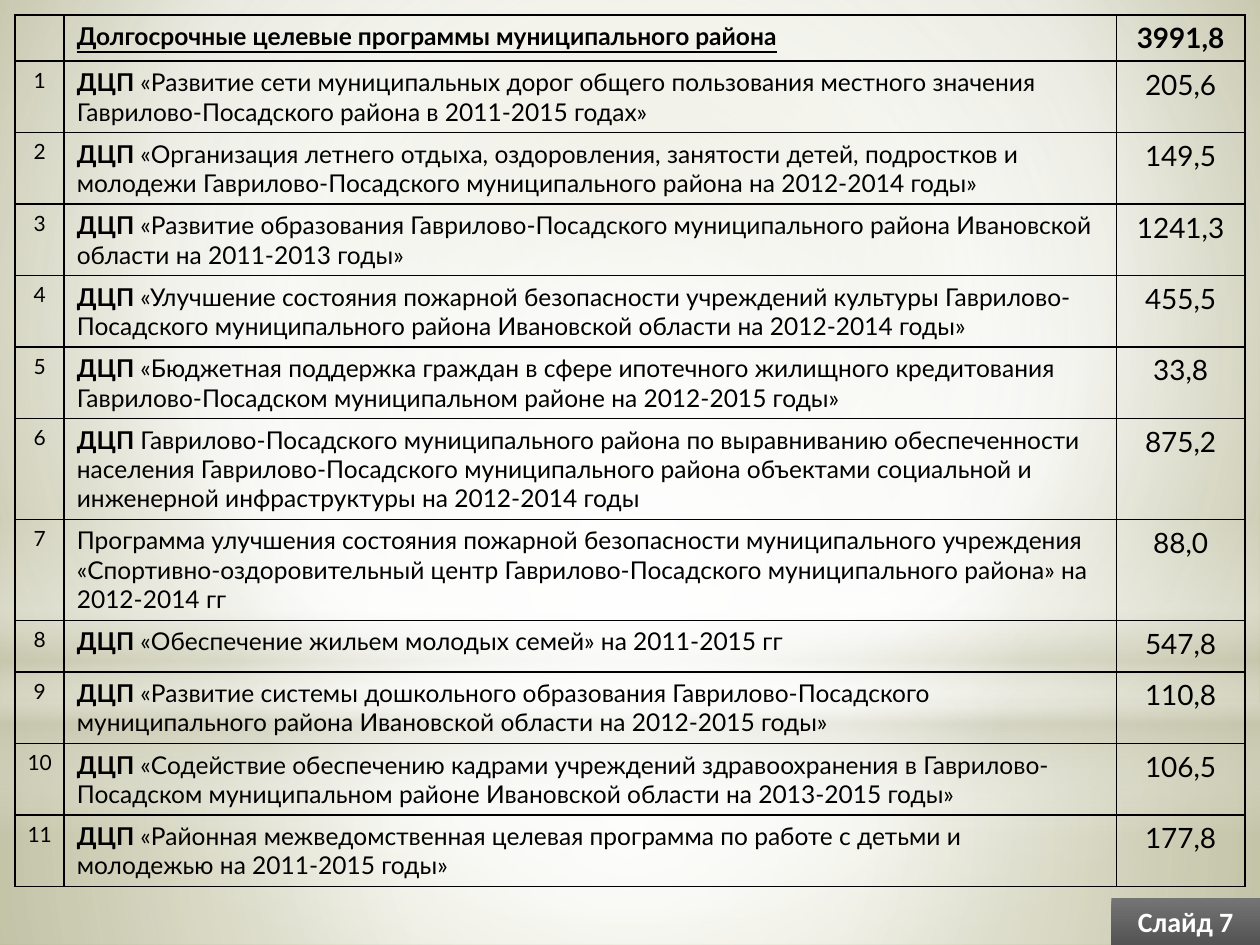
import pptx
import pptx.dml.color
import pptx.enum.shapes
import pptx.enum.text
import pptx.oxml
import pptx.oxml.ns
import pptx.util
from pptx.util import Inches

RGBColor = pptx.dml.color.RGBColor
SHAPE = pptx.enum.shapes.MSO_SHAPE
CENTER = pptx.enum.text.PP_ALIGN.CENTER
qn = pptx.oxml.ns.qn
NS = pptx.oxml.ns.nsdecls("a")

BLACK = RGBColor(0x00, 0x00, 0x00)
WHITE = RGBColor(0xFF, 0xFF, 0xFF)
SAND = RGBColor(0xC8, 0xC8, 0xB1)
OLIVE_LIGHT = RGBColor(0xC7, 0xC7, 0xA5)
OLIVE = RGBColor(0xB1, 0xB1, 0x80)
IVORY = RGBColor(0xFB, 0xFB, 0xF9)
GRAY = RGBColor(0x74, 0x74, 0x74)
GRAY_DARK = RGBColor(0x53, 0x53, 0x53)

MIDDLE = (50, 50, 50, 50)
COLUMNS = (0.39, 8.35, 1.02)
ROW_HEIGHTS = {1: 0.36, 2: 0.56, 3: 0.8}
MARK = "ДЦП "
TITLE = ("Долгосрочные целевые программы муниципального района", "3991,8")

# name, amount, number of text lines
PROGRAMMES = [
    ("ДЦП «Развитие сети муниципальных дорог общего пользования местного значения "
     "Гаврилово-Посадского района в 2011-2015 годах»", "205,6", 2),
    ("ДЦП «Организация летнего отдыха, оздоровления, занятости детей, подростков и молодежи "
     "Гаврилово-Посадского муниципального района на 2012-2014 годы»", "149,5", 2),
    ("ДЦП «Развитие образования Гаврилово-Посадского муниципального района "
     "Ивановской области на 2011-2013 годы»", "1241,3", 2),
    ("ДЦП «Улучшение состояния пожарной безопасности учреждений культуры Гаврилово-Посадского "
     "муниципального района Ивановской области на 2012-2014 годы»", "455,5", 2),
    ("ДЦП «Бюджетная поддержка граждан в сфере ипотечного жилищного кредитования "
     "Гаврилово-Посадском муниципальном районе на 2012-2015 годы»", "33,8", 2),
    ("ДЦП Гаврилово-Посадского муниципального района по выравниванию обеспеченности населения "
     "Гаврилово-Посадского муниципального района объектами социальной и инженерной "
     "инфраструктуры на 2012-2014 годы", "875,2", 3),
    ("Программа улучшения состояния пожарной безопасности муниципального учреждения "
     "«Спортивно-оздоровительный центр Гаврилово-Посадского муниципального района» "
     "на 2012-2014 гг", "88,0", 3),
    ("ДЦП «Обеспечение жильем молодых семей» на 2011-2015 гг", "547,8", 1),
    ("ДЦП «Развитие системы дошкольного образования Гаврилово-Посадского муниципального района "
     "Ивановской области на 2012-2015 годы»", "110,8", 2),
    ("ДЦП «Содействие обеспечению кадрами учреждений здравоохранения в Гаврилово-Посадском "
     "муниципальном районе Ивановской области на 2013-2015 годы»", "106,5", 2),
    ("ДЦП «Районная межведомственная целевая программа по работе с детьми и молодежью "
     "на 2011-2015 годы»", "177,8", 2),
]


class Deck:
    table_font = "Lato"
    label_font = "Calibri"

    def __init__(self, prs):
        self.s = prs.slides.add_slide(prs.slide_layouts[6])

    def gradient(self, fill, parent, stops, center=None):
        """Fill with (position, colour, opacity) stops, top to bottom or around center."""
        fill.solid()
        gs = "".join(
            f'<a:gs pos="{pos * 1000}"><a:srgbClr val="{color}">'
            f'<a:alpha val="{opacity * 1000}"/></a:srgbClr></a:gs>'
            for pos, color, opacity in stops)
        if center:
            l, t, r, b = (1000 * v for v in center)
            path = (f'<a:path path="circle"><a:fillToRect l="{l}" t="{t}" '
                    f'r="{r}" b="{b}"/></a:path>')
        else:
            path = '<a:lin ang="5400000" scaled="0"/>'
        solid = parent.find(".//" + qn("a:solidFill"))
        solid.getparent().replace(solid, pptx.oxml.parse_xml(
            f'<a:gradFill {NS} rotWithShape="1"><a:gsLst>{gs}</a:gsLst>{path}</a:gradFill>'))

    def background(self, stops, center):
        self.gradient(self.s.background.fill, self.s.element.cSld, stops, center)

    def shape(self, kind, box, stops, center=None):
        sp = self.s.shapes.add_shape(kind, *(Inches(v) for v in box))
        sp.shadow.inherit = False
        sp.line.fill.background()
        self.gradient(sp.fill, sp.element.spPr, stops, center)
        return sp

    def format_run(self, r, size, font, color, bold=False):
        r.font.size = pptx.util.Pt(size)
        r.font.name = font
        r.font.color.rgb = color
        r.font.bold = bold

    def label(self, box, text, stops):
        sp = self.shape(SHAPE.RECTANGLE, box, stops)
        tf = sp.text_frame
        tf.word_wrap = True
        tf.text = text
        p = tf.paragraphs[0]
        p.alignment = CENTER
        self.format_run(p.runs[0], 16, self.label_font, WHITE, True)

    def table(self, left, top, heights):
        frame = self.s.shapes.add_table(
            len(heights), len(COLUMNS), Inches(left), Inches(top),
            Inches(sum(COLUMNS)), Inches(sum(heights)))
        table = frame.table
        table.first_row = table.horz_banding = False
        for column, width in zip(table.columns, COLUMNS):
            column.width = Inches(width)
        for row, height in zip(table.rows, heights):
            row.height = Inches(height)
        for cell in table.iter_cells():
            cell.fill.background()
            self.borders(cell)
        return table

    def borders(self, cell):
        tcPr = cell._tc.get_or_add_tcPr()
        for i, side in enumerate("LRTB"):
            tcPr.insert(i, pptx.oxml.parse_xml(
                f'<a:ln{side} {NS} w="12700"><a:solidFill><a:srgbClr val="{BLACK}"/>'
                f'</a:solidFill></a:ln{side}>'))

    def cell(self, cell, text, size, centered=False, bold=False, underline=False, margin=0.1):
        cell.margin_left = cell.margin_right = Inches(margin)
        p = cell.text_frame.paragraphs[0]
        if centered:
            p.alignment = CENTER
        if not text:  # keeps the blank cell from stretching its row
            p._p.append(pptx.oxml.parse_xml(f'<a:endParaRPr {NS} sz="{size * 100}"/>'))
        elif text.startswith(MARK):
            p.text = MARK
            p.add_run().text = text[len(MARK):]
        else:
            p.text = text
        for r in p.runs:
            self.format_run(r, size, self.table_font, BLACK, bold or r.text == MARK)
            if underline:
                r.font.underline = True


def main():
    prs = pptx.Presentation()
    prs.slide_width, prs.slide_height = Inches(10), Inches(7.5)
    deck = Deck(prs)

    deck.background([(0, OLIVE_LIGHT, 100), (60, IVORY, 100), (100, OLIVE, 100)],
                    (20, 10, 20, 60))
    deck.shape(SHAPE.RECTANGLE, (0, 5.58, 10, 1.92),
               [(0, WHITE, 91), (37, WHITE, 76), (100, SAND, 79)], MIDDLE)
    deck.shape(SHAPE.RECTANGLE, (0, 0, 10, 5.58),
               [(0, WHITE, 89), (48, WHITE, 62), (100, SAND, 79)], MIDDLE)
    deck.shape(SHAPE.RECTANGLE, (0, 4.12, 10, 2.5),
               [(0, WHITE, 0), (29, WHITE, 30), (45, SAND, 40),
                (55, WHITE, 26), (65, SAND, 60), (100, WHITE, 0)])
    deck.shape(SHAPE.OVAL, (0, 1.75, 10, 5.58), [(0, WHITE, 100), (56, WHITE, 0)], MIDDLE)

    heights = [ROW_HEIGHTS[1]]
    heights += [max(0.41, ROW_HEIGHTS[lines]) for _, _, lines in PROGRAMMES]
    table = deck.table(0.12, 0.12, heights)
    rows = [("", *TITLE)]
    rows += [(str(n), name, amount) for n, (name, amount, _) in enumerate(PROGRAMMES, 1)]
    for i, (number, name, amount) in enumerate(rows):
        head = i == 0
        deck.cell(table.cell(i, 0), number, 12, centered=True, margin=0.05)
        deck.cell(table.cell(i, 1), name, 14, bold=head, underline=head)
        deck.cell(table.cell(i, 2), amount, 16, centered=True, bold=head)

    deck.label((8.82, 7.13, 1.18, 0.37), "Слайд 7", [(0, GRAY, 100), (100, GRAY_DARK, 100)])
    prs.save("out.pptx")


if __name__ == "__main__":
    main()
